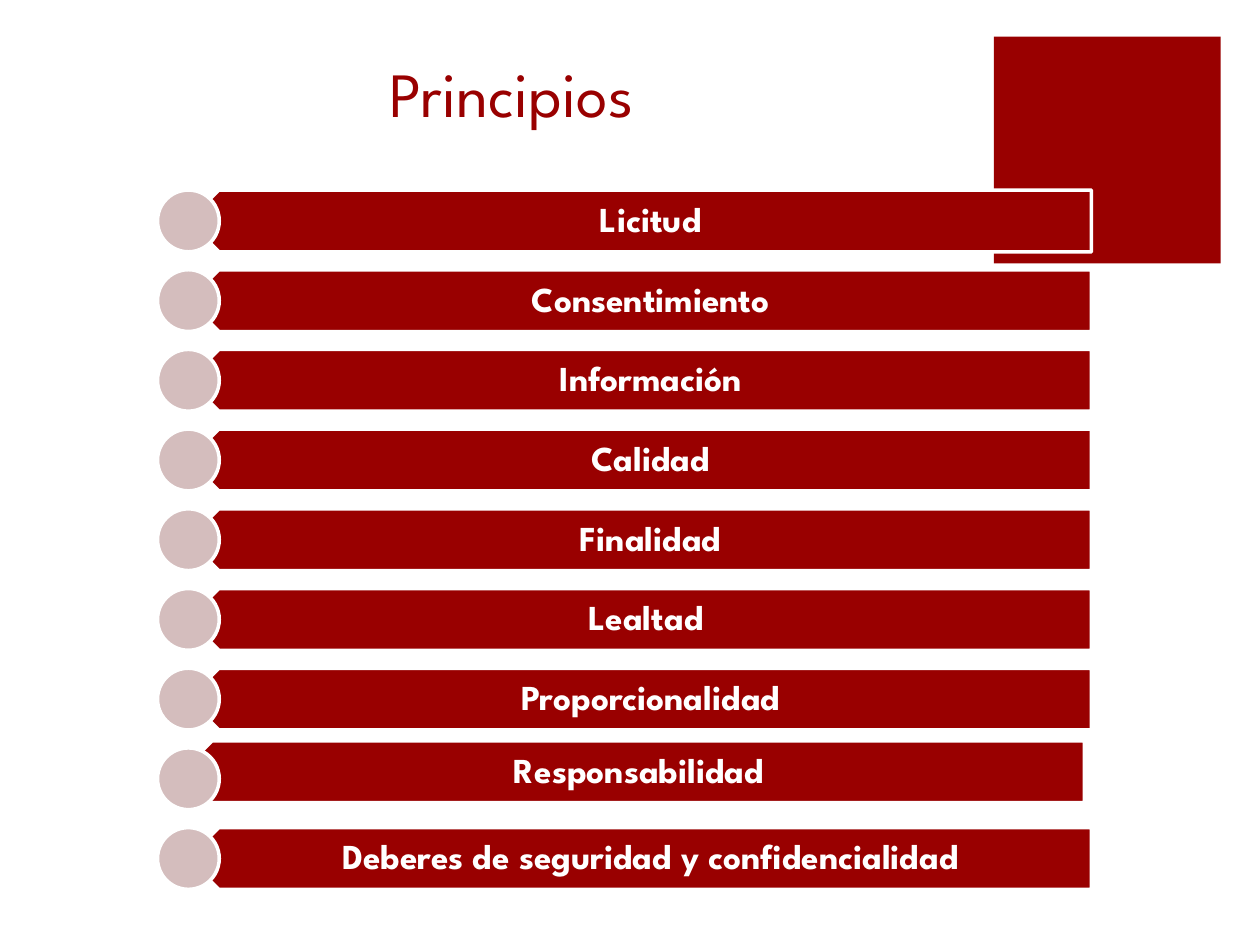
from dataclasses import dataclass

from pptx import Presentation
from pptx.dml.color import RGBColor
from pptx.enum import shapes, text
from pptx.slide import Slide
from pptx.util import Pt

RED = RGBColor(0x99, 0x00, 0x00)
ROSE = RGBColor(0xD4, 0xBD, 0xBD)
WHITE = RGBColor(0xFF, 0xFF, 0xFF)

PRINCIPLES = [
    "Licitud",
    "Consentimiento",
    "Información",
    "Calidad",
    "Finalidad",
    "Lealtad ",
    "Proporcionalidad",
    "Responsabilidad ",
    "Deberes de seguridad y confidencialidad",
]
RAISED_ROW = 7
FIRST_TOP = 108.6
ROW_STEP = 45.54
ROW_HEIGHT = 35.3
BAR_LEFT, BAR_WIDTH = 107.4, 516.3
LABEL_INDENT = 8.8
CIRCLE_LEFT = 90


@dataclass
class SlideBuilder:
    slide: Slide
    font_name: str = "League Spartan"

    def format_text(self, box, size, color, bold=False):
        para = box.text_frame.paragraphs[0]
        para.alignment = text.PP_ALIGN.CENTER
        font = para.runs[0].font
        font.name = self.font_name
        font.size = Pt(size)
        font.bold = bold
        font.color.rgb = color
        return para

    def title(self, words, left, top, width, height):
        box = self.slide.shapes.title
        box.left, box.top = Pt(left), Pt(top)
        box.width, box.height = Pt(width), Pt(height)
        box.text_frame.text = words
        box.text_frame.vertical_anchor = text.MSO_ANCHOR.BOTTOM
        self.format_text(box, 36, RED)

    def shape(self, kind, left, top, width, height, fill, outlined=True):
        shape = self.slide.shapes.add_shape(
            kind, Pt(left), Pt(top), Pt(width), Pt(height))
        shape.shadow.inherit = False
        shape.fill.solid()
        shape.fill.fore_color.rgb = fill
        if outlined:
            shape.line.color.rgb = WHITE
            shape.line.width = Pt(2)
        else:
            shape.line.fill.background()
        return shape

    def label(self, words, left, top, width, height):
        box = self.slide.shapes.add_textbox(
            Pt(left), Pt(top), Pt(width), Pt(height))
        frame = box.text_frame
        frame.word_wrap = True
        frame.vertical_anchor = text.MSO_ANCHOR.MIDDLE
        frame.margin_left, frame.margin_right = Pt(15.4), Pt(11.5)
        frame.margin_top = frame.margin_bottom = Pt(5.6)
        frame.text = words
        self.format_text(box, 20, WHITE, bold=True).line_spacing = 0.9

    def principle(self, words, top, shift_x=0, shift_y=0):
        """Draw one row; the shifts move its bar and label, not its circle."""
        left, bar_top = BAR_LEFT + shift_x, top + shift_y
        bar = self.shape(shapes.MSO_SHAPE.PENTAGON, left, bar_top,
                         BAR_WIDTH, ROW_HEIGHT, RED)
        bar.rotation = 180
        self.label(words, left + LABEL_INDENT, bar_top,
                   BAR_WIDTH - LABEL_INDENT, ROW_HEIGHT)
        self.shape(shapes.MSO_SHAPE.OVAL, CIRCLE_LEFT, top,
                   ROW_HEIGHT, ROW_HEIGHT, ROSE)


def main():
    deck = Presentation()
    deck.slide_width, deck.slide_height = Pt(720), Pt(540)
    page = SlideBuilder(deck.slides.add_slide(deck.slide_layouts[5]))

    page.shape(shapes.MSO_SHAPE.RECTANGLE, 568, 21, 129.6, 129.6, RED,
               outlined=False)
    page.title("Principios", 36, -12.2, 512.6, 90)
    for row, words in enumerate(PRINCIPLES):
        shift = (-4, -4) if row == RAISED_ROW else (0, 0)
        page.principle(words, FIRST_TOP + row * ROW_STEP, *shift)

    deck.save("out.pptx")


if __name__ == "__main__":
    main()
